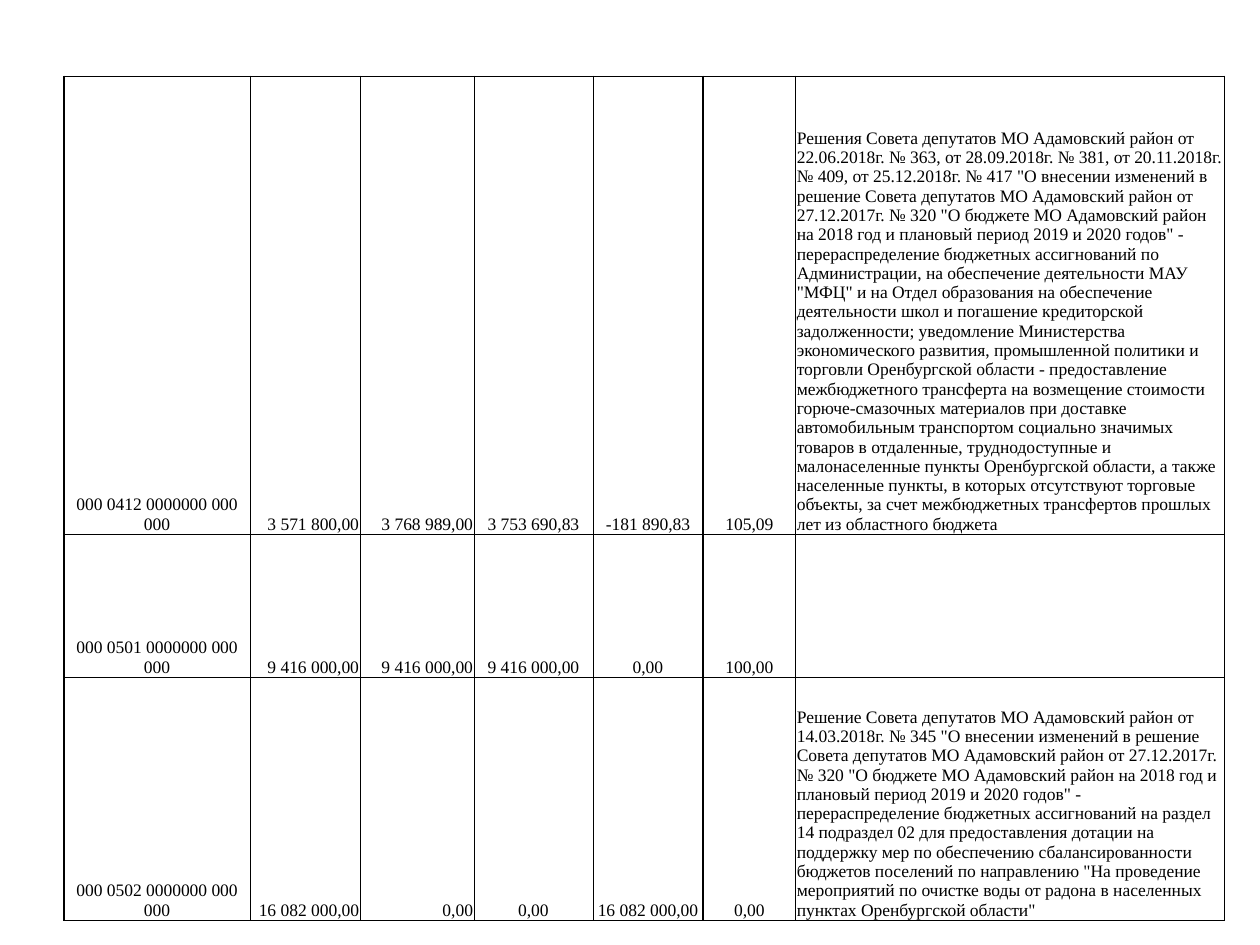
from dataclasses import dataclass

from lxml import etree
from pptx import Presentation
from pptx import util as u
from pptx.dml.color import RGBColor
from pptx.enum import text
from pptx.oxml import ns

PX = u.Inches(1) / 126


@dataclass
class Theme:
    font: str = "Times New Roman"
    size: float = 10
    ink: str = "000000"
    thin: float = 0.5
    thick: float = 1


def px(n):
    return u.Emu(round(n * PX))


class Deck:
    def __init__(self, theme, wide, high):
        self.theme = theme
        self.show = Presentation()
        self.show.slide_width, self.show.slide_height = px(wide), px(high)
        self.slide = None

    def page(self):
        self.slide = self.show.slides.add_slide(self.show.slide_layouts[6])

    def table(self, left, top, cols, rows, data, sides, heavy):
        frame = self.slide.shapes.add_table(
            len(rows), len(cols), px(left), px(top), px(sum(cols)), px(sum(rows)))
        grid = frame.table
        grid.first_row = grid.horz_banding = False
        for col, width in zip(grid.columns, cols):
            col.width = px(width)
        for row, height in zip(grid.rows, rows):
            row.height = px(height)
        for r, line in enumerate(data):
            for c, words in enumerate(line):
                cell = grid.cell(r, c)
                self.edge(cell, heavy.get(c, ""))
                cell.fill.background()
                self.label(cell, words, sides[c])

    def edge(self, cell, heavy):
        props = cell._tc.get_or_add_tcPr()
        for side in "LRTB":
            width = self.theme.thick if side in heavy else self.theme.thin
            line = etree.SubElement(props, ns.qn("a:ln" + side), w=str(u.Pt(width)))
            fill = etree.SubElement(line, ns.qn("a:solidFill"))
            etree.SubElement(fill, ns.qn("a:srgbClr"), val=self.theme.ink)

    def label(self, cell, words, side):
        cell.margin_left = cell.margin_right = cell.margin_top = px(1)
        cell.margin_bottom = 0
        cell.vertical_anchor = text.MSO_ANCHOR.BOTTOM
        cell.text_frame.text = words
        para = cell.text_frame.paragraphs[0]
        para.alignment = side
        for run in para.runs:
            run.font.name = self.theme.font
            run.font.size = u.Pt(self.theme.size)
            run.font.color.rgb = RGBColor.from_string(self.theme.ink)


LEFT, MID, RIGHT = (text.PP_ALIGN.LEFT, text.PP_ALIGN.CENTER, text.PP_ALIGN.RIGHT)

BUDGET = (
    'решение Совета депутатов МО Адамовский район от 27.12.2017г. № 320 '
    '"О бюджете МО Адамовский район на 2018 год и плановый период 2019 и 2020 годов" - '
    'перераспределение бюджетных ассигнований ')

TRADE = (
    'Решения Совета депутатов МО Адамовский район от 22.06.2018г. № 363, '
    'от 28.09.2018г. № 381, от 20.11.2018г. № 409, от 25.12.2018г. № 417 '
    '"О внесении изменений в ' + BUDGET +
    'по Администрации, на обеспечение деятельности МАУ "МФЦ" и на Отдел образования '
    'на обеспечение деятельности школ и погашение кредиторской задолженности; '
    'уведомление Министерства экономического развития, промышленной политики и торговли '
    'Оренбургской области - предоставление межбюджетного трансферта на возмещение '
    'стоимости горюче-смазочных материалов при доставке автомобильным транспортом '
    'социально значимых товаров в отдаленные, труднодоступные и малонаселенные пункты '
    'Оренбургской области, а также населенные пункты, в которых отсутствуют торговые '
    'объекты, за счет межбюджетных трансфертов прошлых лет из областного бюджета')

WATER = (
    'Решение Совета депутатов МО Адамовский район от 14.03.2018г. № 345 '
    '"О внесении изменений в ' + BUDGET +
    'на раздел 14 подраздел 02 для предоставления дотации на поддержку мер по '
    'обеспечению сбалансированности бюджетов поселений по направлению "На проведение '
    'мероприятий по очистке воды от радона в населенных пунктах Оренбургской области"')

DATA = [
    ["000 0412 0000000 000 000", "3 571 800,00", "3 768 989,00", "3 753 690,83",
     "-181 890,83", "105,09", TRADE],
    ["000 0501 0000000 000 000", "9 416 000,00", "9 416 000,00", "9 416 000,00",
     "0,00", "100,00", ""],
    ["000 0502 0000000 000 000", "16 082 000,00", "0,00", "0,00",
     "16 082 000,00", "0,00", WATER],
]


def main():
    deck = Deck(Theme(), 1260, 945)
    deck.page()
    deck.table(
        64, 76,
        cols=[186, 110, 114, 119, 110, 93, 429],
        rows=[458, 143, 243],
        data=DATA,
        sides=[MID, RIGHT, RIGHT, MID, MID, MID, LEFT],
        heavy={0: "L", 4: "R", 5: "L"})
    deck.show.save("out.pptx")


if __name__ == "__main__":
    main()
